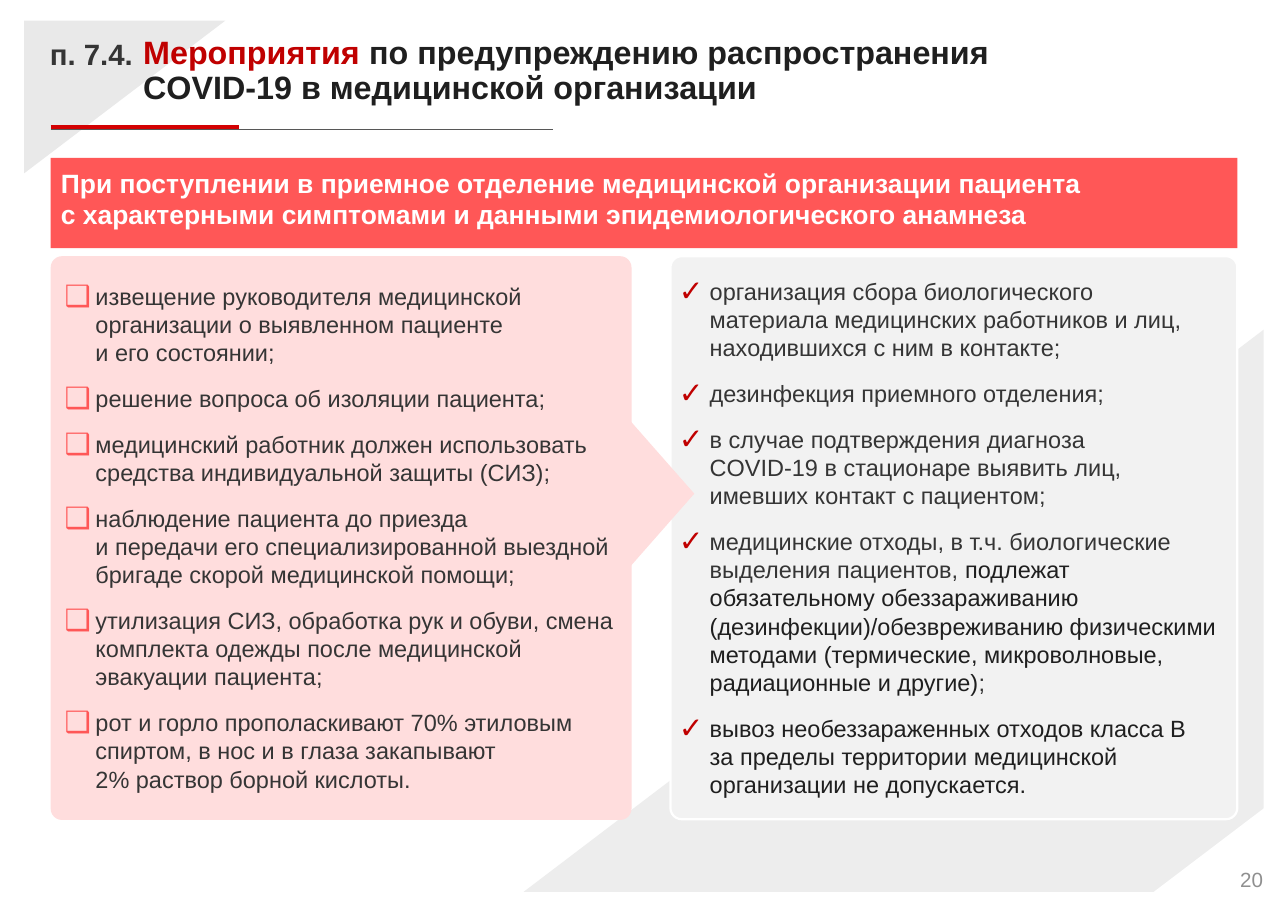
import pptx
import pptx.util
import pptx.dml.color
import pptx.enum.shapes
import pptx.enum.text
import pptx.oxml.ns
import lxml.etree

PX = 12700
FONT = "Arial"
HUES = {
    "white": "FFFFFF", "pale": "EDEDED", "light": "E9E9E9", "panel": "F2F2F2",
    "pink": "FFDDDD", "coral": "FF5757", "red": "C00000", "stripe": "D30102",
    "rule": "575757", "text": "353535", "dark": "1F1F1F", "number": "8F8F8F",
}
KIND = pptx.enum.shapes.MSO_SHAPE
ALIGN = pptx.enum.text.PP_ALIGN
ANCHOR = pptx.enum.text.MSO_ANCHOR
FIT = pptx.enum.text.MSO_AUTO_SIZE

deck = pptx.Presentation()
deck.slide_width = 1754 * PX
deck.slide_height = 1241 * PX
slide = deck.slides.add_slide(deck.slide_layouts[6])


def draw(kind, box, fill, turn=0):
    shape = slide.shapes.add_shape(kind, *[n * PX for n in box])
    shape.shadow.inherit = False
    shape.fill.solid()
    shape.fill.fore_color.rgb = pptx.dml.color.RGBColor.from_string(HUES[fill])
    shape.line.fill.background()
    shape.rotation = turn
    return shape


def write(shape, paras, size, bold=False, inset=(0, 0, 0, 0), align=ALIGN.LEFT,
          anchor=ANCHOR.TOP, tight=None, mark=None):
    frame = shape.text_frame
    frame.word_wrap = True
    frame.vertical_anchor = anchor
    (frame.margin_left, frame.margin_top,
     frame.margin_right, frame.margin_bottom) = [n * PX for n in inset]
    for i, runs in enumerate(paras):
        para = frame.add_paragraph() if i else frame.paragraphs[0]
        para.alignment = align
        if tight:
            para.line_spacing = tight
        if mark:
            sign, hue = mark
            props = para._p.get_or_add_pPr()
            props.set("marL", str(42 * PX))
            props.set("indent", str(-42 * PX))
            tone = lxml.etree.SubElement(props, pptx.oxml.ns.qn("a:buClr"))
            lxml.etree.SubElement(tone, pptx.oxml.ns.qn("a:srgbClr"), val=HUES[hue])
            lxml.etree.SubElement(props, pptx.oxml.ns.qn("a:buSzPct"), val="125000")
            lxml.etree.SubElement(props, pptx.oxml.ns.qn("a:buFont"), typeface=FONT)
            lxml.etree.SubElement(props, pptx.oxml.ns.qn("a:buChar"), char=sign)
            para.space_after = pptx.util.Pt(12)
            if i:
                para.space_before = pptx.util.Pt(12)
        for text, hue in runs:
            for j, line in enumerate(text.split("\n")):
                if j:
                    para.add_line_break()
                run = para.add_run()
                run.text = line
                run.font.name = FONT
                run.font.size = pptx.util.Pt(size)
                run.font.bold = bold
                run.font.color.rgb = pptx.dml.color.RGBColor.from_string(HUES[hue])


draw(KIND.RIGHT_TRIANGLE, (834, 328, 766, 1008), "pale", 270)
draw(KIND.RIGHT_TRIANGLE, (66, -5, 208, 274), "light", 90)
draw(KIND.RIGHT_TRIANGLE, (1567, 1051, 161, 212), "white", 270)

title = [("Мероприятия", "red"),
         (" по предупреждению распространения COVID-19 в медицинской организации", "dark")]
labels = [
    ((1648, 1181, 72, 34), [("20", "number")], 28, False, ALIGN.RIGHT, None),
    ((195, 50, 1257, 96), title, 44, True, ALIGN.LEFT, 0.9),
    ((68, 55, 123, 44), [("п. 7.4.", "text")], 40, True, ALIGN.LEFT, 0.9),
]
for box, runs, size, bold, align, tight in labels:
    label = slide.shapes.add_textbox(*[n * PX for n in box])
    write(label, [runs], size, bold, align=align, tight=tight)
    label.text_frame.auto_size = FIT.SHAPE_TO_FIT_TEXT

for end, y, hue, width in [(753, 176, "rule", 1.5), (326, 173, "stripe", 5.75)]:
    line = slide.shapes.add_connector(
        pptx.enum.shapes.MSO_CONNECTOR.STRAIGHT, 69 * PX, y * PX, end * PX, y * PX)
    line.line.color.rgb = pptx.dml.color.RGBColor.from_string(HUES[hue])
    line.line.width = pptx.util.Pt(width)
    lxml.etree.SubElement(line._element.spPr, pptx.oxml.ns.qn("a:effectLst"))

left = draw(KIND.ROUNDED_RECTANGLE, (69, 349, 791, 768), "pink")
left.adjustments[0] = 0.02
steps = [
    "извещение руководителя медицинской организации о выявленном пациенте\nи его состоянии;",
    "решение вопроса об изоляции пациента;",
    "медицинский работник должен использовать средства индивидуальной защиты (СИЗ);",
    "наблюдение пациента до приезда\nи передачи его специализированной выездной "
    "бригаде скорой медицинской помощи;",
    "утилизация СИЗ, обработка рук и обуви, смена комплекта одежды после медицинской "
    "эвакуации пациента;",
    "рот и горло прополаскивают 70% этиловым спиртом, в нос и в глаза закапывают\n"
    "2% раствор борной кислоты.",
]
roster = slide.shapes.add_textbox(81 * PX, 380 * PX, 764 * PX, 710 * PX)
write(roster, [[(step, "text")] for step in steps], 32,
      inset=(7, 4, 7, 4), mark=("❑", "coral"))
roster.text_frame.auto_size = FIT.SHAPE_TO_FIT_TEXT

right = draw(KIND.ROUNDED_RECTANGLE, (913, 349, 772, 767), "panel")
right.adjustments[0] = 0.02
right.line.color.rgb = pptx.dml.color.RGBColor.from_string(HUES["white"])
right.line.width = pptx.util.Pt(3)
tasks = [
    [("организация сбора биологического\nматериала медицинских работников и лиц, "
      "находившихся с ним в контакте;", "text")],
    [("дезинфекция приемного отделения;", "text")],
    [("в случае подтверждения диагноза\nCOVID-19 в стационаре выявить лиц,\n"
      "имевших контакт с пациентом;", "text")],
    [("медицинские отходы, в т.ч. биологические выделения пациентов, ", "text"),
     ("подлежат обязательному обеззараживанию (дезинфекции)/обезвреживанию "
      "физическими методами (термические, микроволновые, радиационные и другие)", "dark"),
     (";", "text")],
    [("вывоз необеззараженных отходов класса В\nза пределы территории медицинской "
      "организации не допускается.", "dark")],
]
write(right, tasks, 32, inset=(7, 4, 7, 4), anchor=ANCHOR.MIDDLE, mark=("✓", "red"))

banner = draw(KIND.RECTANGLE, (69, 215, 1616, 123), "coral")
write(banner, [[("При поступлении в приемное отделение медицинской организации пациента\n"
                 "с характерными симптомами и данными эпидемиологического анамнеза", "white")]],
      36, True, inset=(14, 12, 14, 4))

draw(KIND.ISOSCELES_TRIANGLE, (767, 618, 248, 109), "pink", 90)

deck.save("out.pptx")
